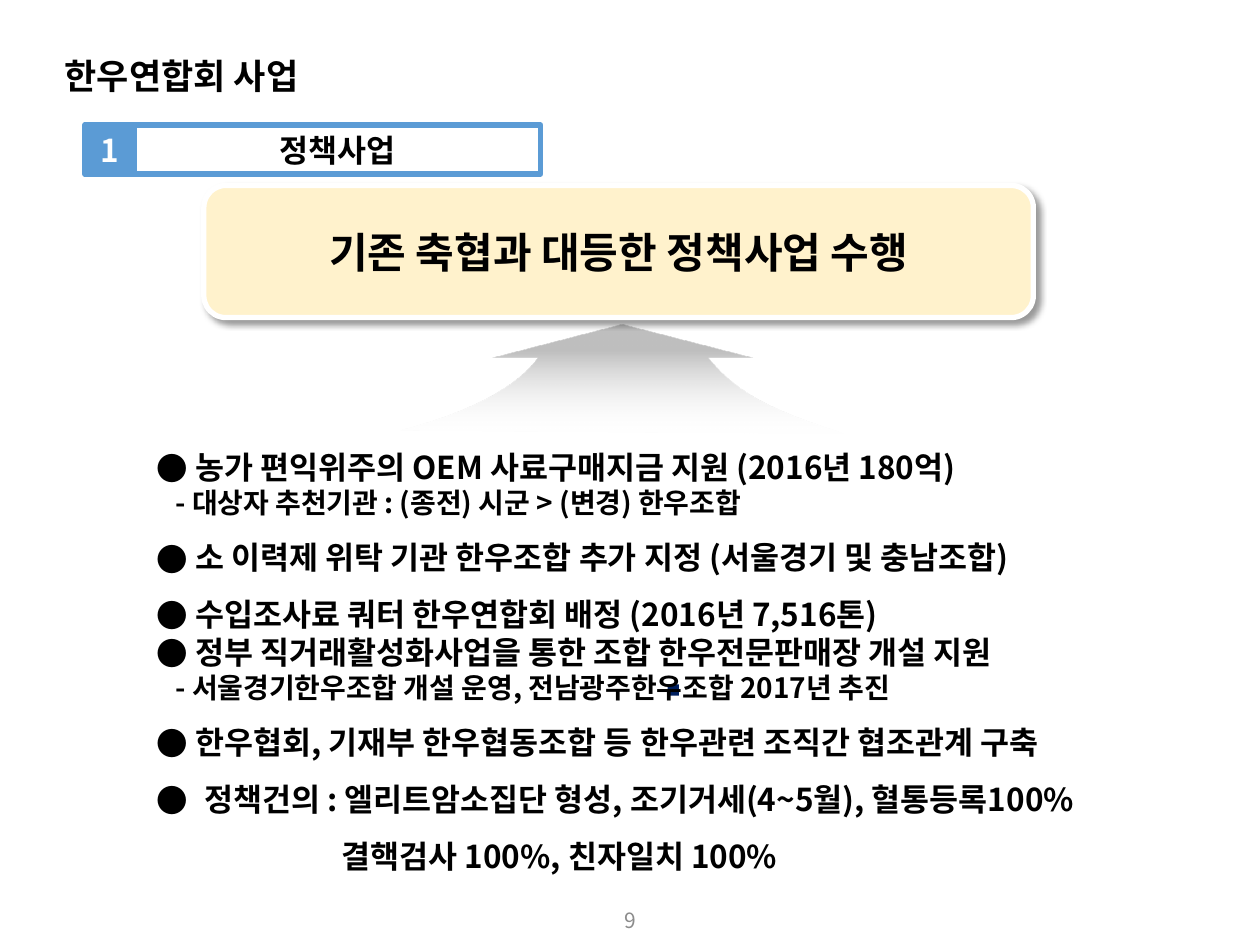
from dataclasses import dataclass
from typing import Optional

from lxml.etree import SubElement
from pptx import Presentation
from pptx.dml.color import RGBColor
from pptx.enum.shapes import MSO_SHAPE
from pptx.enum.text import MSO_ANCHOR, MSO_AUTO_SIZE, PP_ALIGN
from pptx.oxml.ns import qn
from pptx.util import Pt

FONT_NAME = "Noto Sans CJK KR"
BLACK = RGBColor(0x00, 0x00, 0x00)
WHITE = RGBColor(0xFF, 0xFF, 0xFF)
GRAY = RGBColor(0x8C, 0x8C, 0x8C)
SILVER = RGBColor(0xBF, 0xBF, 0xBF)
BLUE = RGBColor(0x5B, 0x9B, 0xD5)
NAVY = RGBColor(0x00, 0x20, 0x60)
CREAM = RGBColor(0xFF, 0xF2, 0xCC)
CURVE_STEPS = 16


@dataclass(frozen=True)
class Frame:
    left: float
    top: float
    width: float
    height: float


@dataclass(frozen=True)
class Label:
    text: str
    size: float
    color: RGBColor = BLACK
    bold: bool = True


@dataclass(frozen=True)
class Box:
    frame: Frame
    fill: Optional[RGBColor] = None
    line: Optional[RGBColor] = None
    label: Optional[Label] = None
    preset: MSO_SHAPE = MSO_SHAPE.RECTANGLE


@dataclass(frozen=True)
class Item:
    text: str
    size: float = 18
    margin: float = 22.5
    bullet: bool = True
    spacing: float = 1


ITEMS = [
    Item("농가 편익위주의 OEM 사료구매지금 지원 (2016년 180억)"),
    Item("- 대상자 추천기관 : (종전) 시군 > (변경) 한우조합", 16, 11, False),
    Item("소 이력제 위탁 기관 한우조합 추가 지정 (서울경기 및 충남조합)", spacing=1.5),
    Item("수입조사료 쿼터 한우연합회 배정 (2016년 7,516톤)", spacing=1.5),
    Item("정부 직거래활성화사업을 통한 조합 한우전문판매장 개설 지원"),
    Item("- 서울경기한우조합 개설 운영, 전남광주한우조합 2017년 추진", 16, 11, False),
    Item("한우협회, 기재부 한우협동조합 등 한우관련 조직간 협조관계 구축", spacing=1.5),
    Item("정책건의 : 엘리트암소집단 형성, 조기거세(4~5월), 혈통등록100%", margin=27.5, spacing=1.5),
    Item("결핵검사 100%, 친자일치 100%", margin=106, bullet=False, spacing=1.5),
]
BANNER = Box(Frame(116.5, 106, 474, 75.5), CREAM, WHITE,
             Label("기존 축협과 대등한 정책사업 수행", 24), MSO_SHAPE.ROUNDED_RECTANGLE)
SECTION_BOXES = [
    Box(Frame(48.5, 71.5, 28, 28), BLUE, BLUE, Label("1", 18, WHITE)),
    Box(Frame(77, 71.5, 232, 28), None, BLUE, Label("정책사업", 18)),
]
MARKER = Box(Frame(381.5, 391, 6.5, 6.5), NAVY)


def place(shape, frame: Frame) -> None:
    shape.left, shape.top = Pt(frame.left), Pt(frame.top)
    shape.width, shape.height = Pt(frame.width), Pt(frame.height)


def write(paragraph, label: Label) -> None:
    paragraph.text = label.text
    font = paragraph.font
    font.size, font.bold, font.name = Pt(label.size), label.bold, FONT_NAME
    font.color.rgb = label.color
    defaults = paragraph._p.pPr.find(qn("a:defRPr"))
    SubElement(defaults, qn("a:ea")).set("typeface", FONT_NAME)


def write_centered(shape, label: Label) -> None:
    text_frame = shape.text_frame
    text_frame.word_wrap = True
    text_frame.vertical_anchor = MSO_ANCHOR.MIDDLE
    paragraph = text_frame.paragraphs[0]
    paragraph.alignment = PP_ALIGN.CENTER
    write(paragraph, label)


def add_box(slide, box: Box):
    frame = box.frame
    shape = slide.shapes.add_shape(box.preset, Pt(frame.left), Pt(frame.top),
                                   Pt(frame.width), Pt(frame.height))
    shape.shadow.inherit = False
    if box.fill is None:
        shape.fill.background()
    else:
        shape.fill.solid()
        shape.fill.fore_color.rgb = box.fill
    if box.line is None:
        shape.line.fill.background()
    else:
        shape.line.color.rgb = box.line
        shape.line.width = Pt(3)
    if box.label:
        write_centered(shape, box.label)
    return shape


def add_outer_shadow(shape) -> None:
    effects = shape._element.spPr.find(qn("a:effectLst"))
    shadow = SubElement(effects, qn("a:outerShdw"), blurRad=str(Pt(4)), dist=str(Pt(3)),
                        dir="2700000", algn="tl", rotWithShape="0")
    color = SubElement(shadow, qn("a:srgbClr"), val="000000")
    SubElement(color, qn("a:alpha"), val="40000")


def curve(*controls: tuple[float, float]) -> list[tuple[float, float]]:
    points = []
    for step in range(1, CURVE_STEPS + 1):
        t = step / CURVE_STEPS
        weights = ((1 - t) ** 3, 3 * t * (1 - t) ** 2, 3 * t * t * (1 - t), t ** 3)
        points.append(tuple(sum(weight * control[axis] for weight, control in zip(weights, controls))
                            for axis in (0, 1)))
    return points


def add_arrow(slide) -> None:
    start = (483, 247.5)
    outline = [
        *curve(start, (433.5, 232.5), (418.5, 221), (404.5, 204.5)),
        (430, 204.5), (355.5, 185.5), (281.5, 204.5), (307.5, 204.5),
        *curve((307.5, 204.5), (296.5, 219.5), (272, 234.5), (229, 245.5)),
    ]
    builder = slide.shapes.build_freeform(Pt(start[0]), Pt(start[1]))
    builder.add_line_segments([(Pt(x), Pt(y)) for x, y in outline], close=True)
    arrow = builder.convert_to_shape()
    arrow.shadow.inherit = False
    arrow.line.fill.background()
    arrow.fill.gradient()
    arrow.fill.gradient_angle = 270
    for stop, position, color in zip(arrow.fill.gradient_stops, (0.24, 1), (SILVER, WHITE)):
        stop.position = position
        stop.color.rgb = color
    last_color = list(arrow._element.spPr.iter(qn("a:srgbClr")))[-1]
    SubElement(last_color, qn("a:alpha"), val="0")


def fill_title(title) -> None:
    place(title, Frame(25, 29.5, 544.5, 30))
    text_frame = title.text_frame
    text_frame.auto_size = MSO_AUTO_SIZE.NONE
    text_frame.vertical_anchor = MSO_ANCHOR.MIDDLE
    text_frame.margin_left = Pt(12)
    paragraph = text_frame.paragraphs[0]
    paragraph.alignment = PP_ALIGN.LEFT
    paragraph.line_spacing = 0.9
    write(paragraph, Label("한우연합회 사업", 20))


def fill_body(body, items: list[Item]) -> None:
    place(body, Frame(82, 252.5, 590, 253.5))
    text_frame = body.text_frame
    text_frame.auto_size = MSO_AUTO_SIZE.NONE
    for index, item in enumerate(items):
        paragraph = text_frame.add_paragraph() if index else text_frame.paragraphs[0]
        properties = paragraph._p.get_or_add_pPr()
        properties.set("marL", str(Pt(item.margin)))
        properties.set("indent", str(-Pt(item.margin) if item.bullet else 0))
        if item.bullet:
            SubElement(properties, qn("a:buFont"), typeface=FONT_NAME)
            SubElement(properties, qn("a:buChar"), char="●")
        else:
            SubElement(properties, qn("a:buNone"))
        paragraph.space_before = Pt(0)
        paragraph.line_spacing = item.spacing
        write(paragraph, Label(item.text, item.size))


def main() -> None:
    presentation = Presentation()
    presentation.slide_width, presentation.slide_height = Pt(720), Pt(540)
    slide = presentation.slides.add_slide(presentation.slide_layouts[1])
    body = slide.placeholders[1]
    fill_title(slide.shapes.title)
    fill_body(body, ITEMS)
    add_box(slide, MARKER)
    add_arrow(slide)
    slide.shapes._spTree.append(body._element)
    add_outer_shadow(add_box(slide, BANNER))
    for box in SECTION_BOXES:
        add_box(slide, box)
    page_number = slide.shapes.add_textbox(Pt(279), Pt(511), Pt(162), Pt(29))
    write_centered(page_number, Label("9", 12, GRAY, False))
    presentation.save("out.pptx")


if __name__ == "__main__":
    main()
